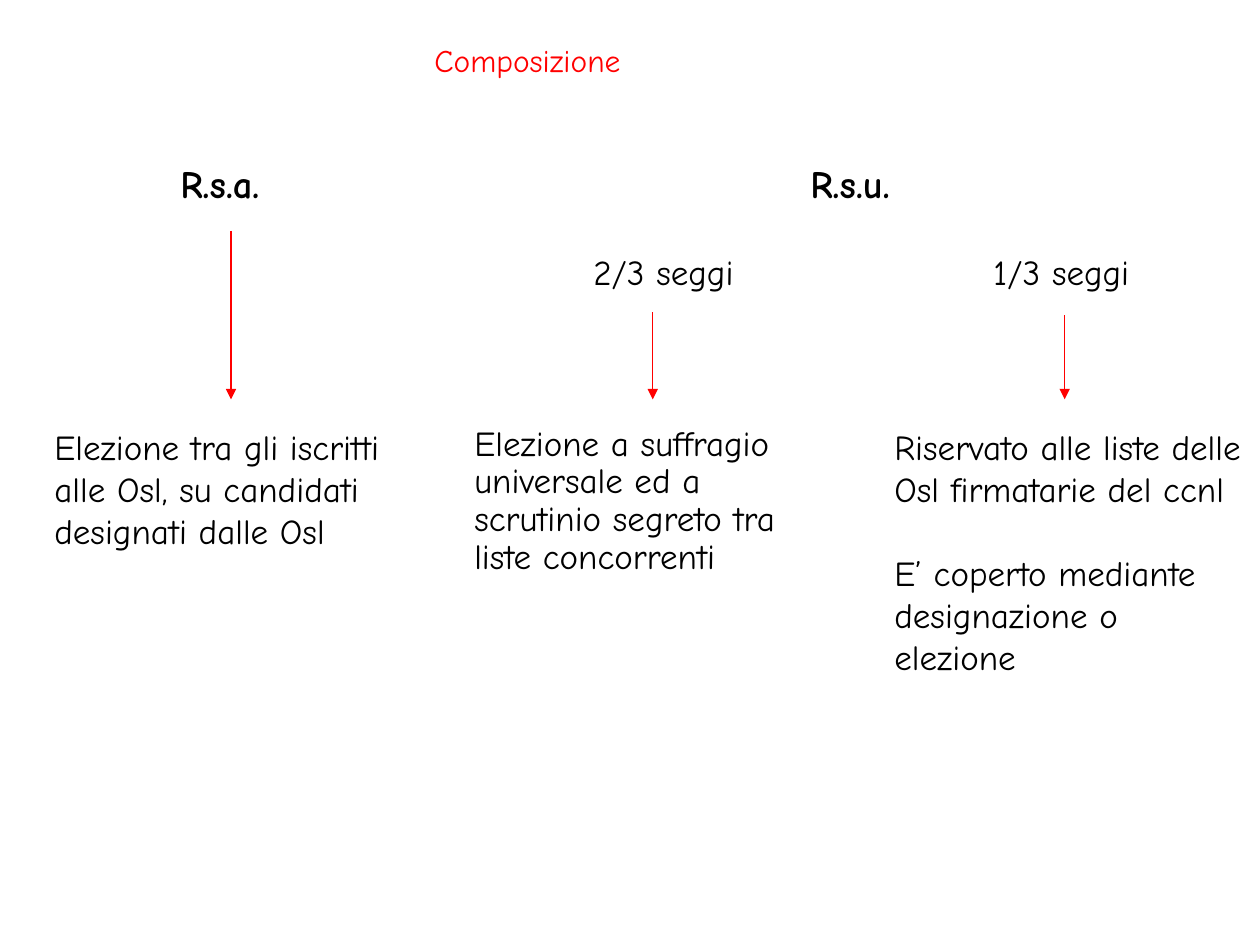
"""Build the slide comparing how R.s.a. and R.s.u. are composed."""
from lxml.etree import SubElement
from pptx import Presentation
from pptx.dml.color import RGBColor
from pptx.enum.shapes import MSO_CONNECTOR
from pptx.enum.text import MSO_ANCHOR, PP_ALIGN
from pptx.oxml.ns import qn
from pptx.util import Pt

COLORS = {"text": "000000", "accent": "FF0000"}
FONT_NAME = "Comic Neue"
HEADING = {"size": Pt(22), "bold": True}
SEATS_TOP, ARROW_END, BODY_TOP = 139.7, 228.2, 239.8


class SlideBuilder:
    def __init__(self, slide):
        self.slide = slide

    def fill_text(self, shape, texts, color="text", font=None, layout=None):
        frame = shape.text_frame
        frame.word_wrap = True
        frame.vertical_anchor = MSO_ANCHOR.TOP
        font_values = {"name": FONT_NAME, "size": Pt(20), "bold": False, **(font or {})}
        layout_values = {"alignment": PP_ALIGN.LEFT, **(layout or {})}
        for index, text in enumerate(texts):
            paragraph = frame.add_paragraph() if index else frame.paragraphs[0]
            for name, value in layout_values.items():
                setattr(paragraph, name, value)
            if index:
                paragraph.space_before = Pt(24)
            run = paragraph.add_run()
            run.text = text
            for name, value in font_values.items():
                setattr(run.font, name, value)
            run.font.color.rgb = RGBColor.from_string(COLORS[color])

    def title(self, text, left, top, width, height):
        shape = self.slide.shapes.title
        box = {"left": left, "top": top, "width": width, "height": height}
        for name, value in box.items():
            setattr(shape, name, Pt(value))
        self.fill_text(shape, [text], "accent", {"size": Pt(18)})

    def text(self, texts, left, top, width, height, font=None, layout=None):
        box = (Pt(value) for value in (left, top, width, height))
        shape = self.slide.shapes.add_textbox(*box)
        self.fill_text(shape, texts, font=font, layout=layout)

    def down_arrow(self, x, top):
        ends = (Pt(value) for value in (x, top, x, ARROW_END))
        connector = self.slide.shapes.add_connector(MSO_CONNECTOR.STRAIGHT, *ends)
        connector.line.width = Pt(0.75)
        connector.line.color.rgb = RGBColor.from_string(COLORS["accent"])
        properties = connector._element.spPr
        SubElement(properties.find(qn("a:ln")), qn("a:tailEnd"), type="triangle")
        SubElement(properties, qn("a:effectLst"))


def main():
    presentation = Presentation()
    presentation.slide_width, presentation.slide_height = Pt(720), Pt(540)
    builder = SlideBuilder(presentation.slides.add_slide(presentation.slide_layouts[5]))
    builder.title("Composizione", 241, 20, 223, 45)

    for heading, left in (("R.s.a.", 96), ("R.s.u.", 456)):
        builder.text([heading], left, 88, 80, 34, HEADING)

    builder.text(["2/3 seggi"], 332, SEATS_TOP, 108, 31)
    builder.text(["1/3 seggi"], 538, SEATS_TOP, 137, 31, layout={"alignment": PP_ALIGN.CENTER})

    for x, top in ((132, 132), (373, 178.5), (608.4, 180)):
        builder.down_arrow(x, top)

    builder.text(
        ["Elezione tra gli iscritti alle Osl, su candidati designati dalle Osl"],
        24, BODY_TOP, 222, 103,
    )
    builder.text(
        ["Elezione a suffragio universale ed a scrutinio segreto tra liste concorrenti"],
        264, BODY_TOP, 216, 102, layout={"line_spacing": 0.9},
    )
    builder.text(
        ["Riservato alle liste delle Osl firmatarie del ccnl",
         "E’ coperto mediante designazione o elezione"],
        504, BODY_TOP, 216, 175,
    )
    presentation.save("out.pptx")


if __name__ == "__main__":
    main()
